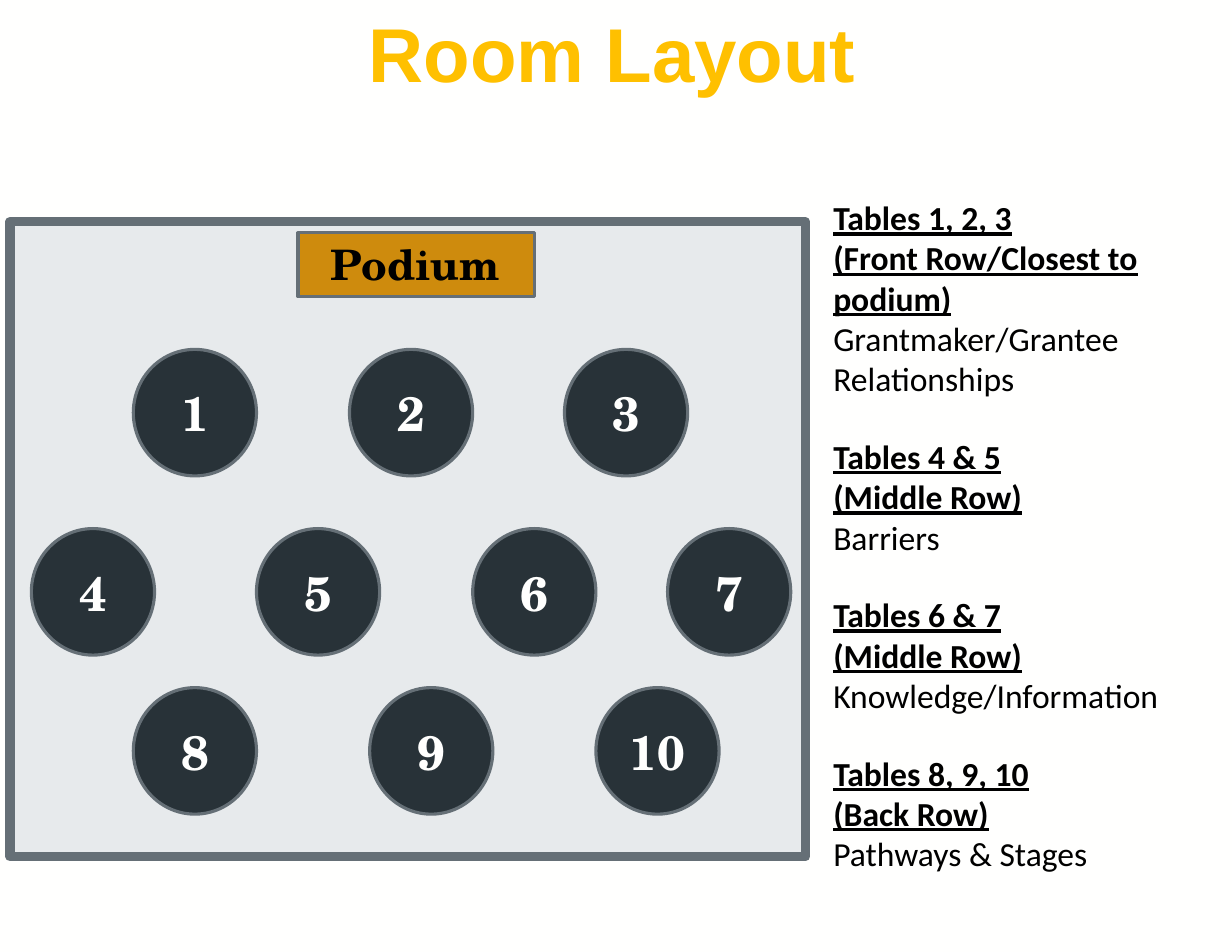
from collections import namedtuple

from pptx import Presentation
from pptx.dml.color import RGBColor
from pptx.enum.shapes import MSO_SHAPE as Shape
from pptx.enum.text import MSO_ANCHOR as Anchor, MSO_AUTO_SIZE as AutoSize, PP_ALIGN as Align
from pptx.util import Inches, Pt

Box = namedtuple("Box", "left top width height")

PAPER, INK, GOLD, AMBER = "FFFFFE", "000000", "FFC000", "CE8B0D"
FLOOR, EDGE, TABLE = "E7EAEC", "656F76", "283238"
SERIF = "TeX Gyre Schola"

# Table rows: centre height and table centres, in percent of the room
TABLE_ROWS = [
    (30.07, [23.24, 50.42, 77.46]),
    (58.29, [10.42, 38.73, 65.92, 90.42]),
    (83.33, [23.24, 52.96, 81.41]),
]
TABLE_WIDTH, TABLE_HEIGHT = 15.49, 19.93

# Each group is a list of paragraphs; each paragraph a list of (text, is heading)
TOPICS = [
    [[("Tables 1, 2, 3", True)],
     [("(Front Row/Closest to podium) ", True), ("Grantmaker/Grantee Relationships", False)]],
    [[("Tables 4 & 5", True)], [("(Middle Row)", True)], [("Barriers", False)]],
    [[("Tables 6 & 7", True)],
     [("(Middle Row) ", True), ("Knowledge/Information", False)]],
    [[("Tables 8, 9, 10", True)], [("(Back Row)", True)], [("Pathways & Stages", False)]],
]


def colour(value):
    return RGBColor.from_string(value)


def part(box, left, top, width, height):
    """Return the box at the given percentages of another box."""
    return Box(int(box.left + box.width * left / 100), int(box.top + box.height * top / 100),
               int(box.width * width / 100), int(box.height * height / 100))


def set_font(run, size, name, value, bold=True):
    font = run.font
    font.size, font.name, font.bold = Pt(size), name, bold
    font.color.rgb = colour(value)


def set_frame(frame, anchor=Anchor.TOP):
    frame.word_wrap = True
    frame.vertical_anchor = anchor
    frame.margin_left = frame.margin_right = Inches(0.11)
    frame.margin_top = frame.margin_bottom = Inches(0.06)


def set_label(frame, text, size, name, value, anchor=Anchor.TOP):
    set_frame(frame, anchor)
    frame.text = text
    label = frame.paragraphs[0]
    label.alignment = Align.CENTER
    set_font(label.runs[0], size, name, value)


def add_outlined(slide, kind, box, fill, weight=2):
    shape = slide.shapes.add_shape(kind, *box)
    shape.shadow.inherit = False
    shape.fill.solid()
    shape.fill.fore_color.rgb = colour(fill)
    shape.line.color.rgb = colour(EDGE)
    shape.line.width = Pt(weight)
    return shape


def place_title(slide, box):
    title = slide.shapes.title
    title.left, title.top, title.width, title.height = box
    title.text_frame.auto_size = AutoSize.NONE
    set_label(title.text_frame, "Room Layout", 49, "Arial", GOLD)


def draw_room(slide, room):
    add_outlined(slide, Shape.RECTANGLE, room, FLOOR, 6)
    number = 0
    for middle, centres in TABLE_ROWS:
        for centre in centres:
            number += 1
            seat = part(room, centre - TABLE_WIDTH / 2, middle - TABLE_HEIGHT / 2,
                        TABLE_WIDTH, TABLE_HEIGHT)
            table = add_outlined(slide, Shape.OVAL, seat, TABLE)
            set_label(table.text_frame, str(number), 31, SERIF, PAPER, Anchor.MIDDLE)
            table.text_frame.word_wrap = False


def draw_podium(slide, room):
    add_outlined(slide, Shape.RECTANGLE, part(room, 36.2, 1.76, 29.72, 10.05), AMBER)
    label = slide.shapes.add_textbox(*part(room, 38.73, 1.59, 24.51, 10.05))
    set_label(label.text_frame, "Podium", 27, SERIF, INK)


def list_topics(slide, box):
    frame = slide.shapes.add_textbox(*box).text_frame
    set_frame(frame)
    for group_index, group in enumerate(TOPICS):
        for line_index, pieces in enumerate(group):
            first = group_index == line_index == 0
            paragraph = frame.paragraphs[0] if first else frame.add_paragraph()
            if line_index == 0 and not first:
                paragraph.space_before = Pt(24)
            for text, is_heading in pieces:
                run = paragraph.add_run()
                run.text = text
                set_font(run, 21.6, "Calibri", INK, is_heading)
                run.font.underline = is_heading


def main():
    deck = Presentation()
    deck.slide_width, deck.slide_height = Inches(11), Inches(8.5)
    slide = deck.slides.add_slide(deck.slide_layouts[5])
    slide.background.fill.solid()
    slide.background.fill.fore_color.rgb = colour(PAPER)

    page = Box(0, 0, deck.slide_width, deck.slide_height)
    room = part(page, 0.82, 23.29, 64.55, 66.71)
    place_title(slide, part(page, 9.91, 0, 79.55, 23.29))
    draw_room(slide, room)
    list_topics(slide, part(page, 66.64, 20, 32.55, 76.24))
    draw_podium(slide, room)
    deck.save("out.pptx")


if __name__ == "__main__":
    main()
